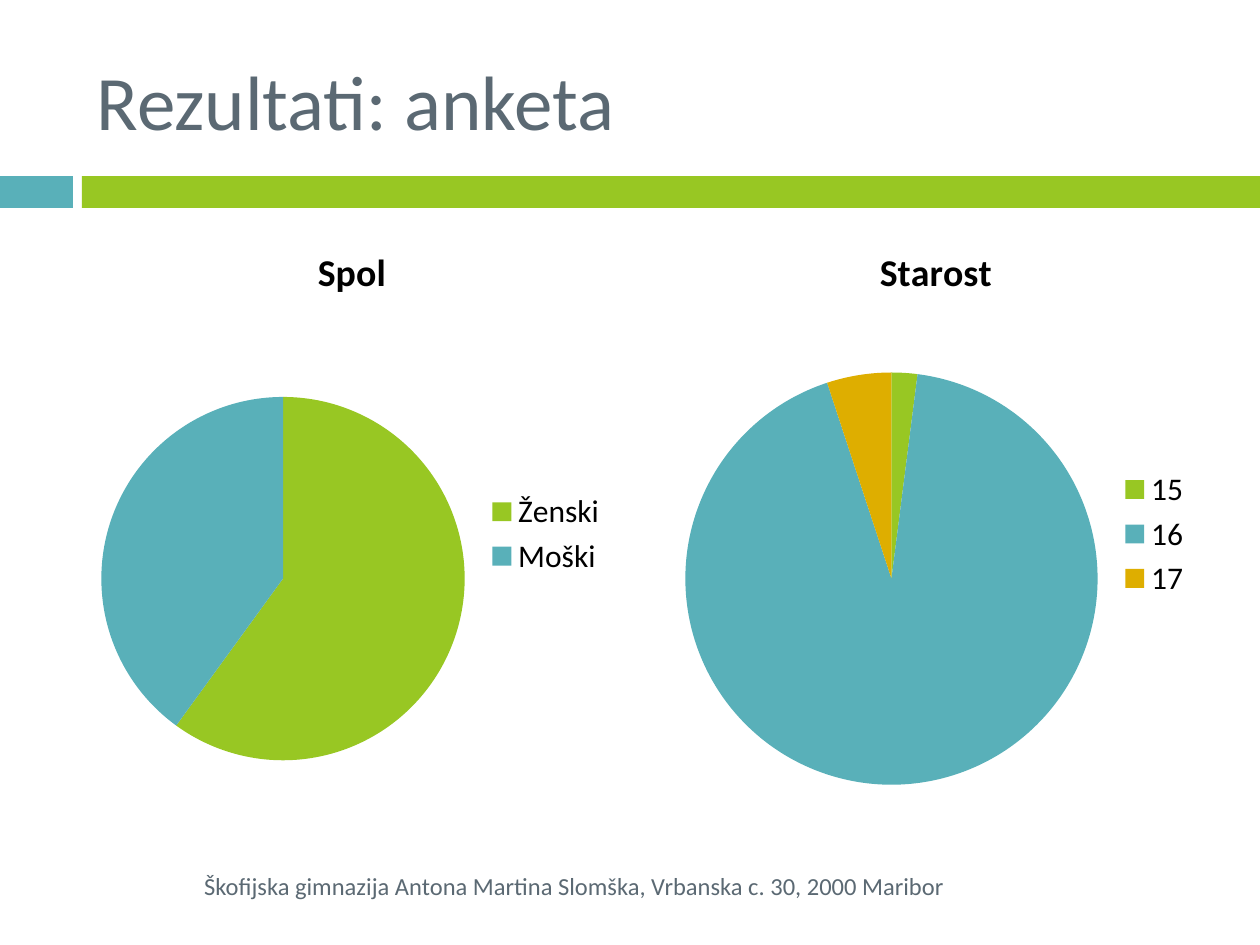
import dataclasses

import pptx
import pptx.chart.data
import pptx.dml.color
import pptx.enum.chart
import pptx.enum.shapes
import pptx.enum.text
import pptx.util


@dataclasses.dataclass(frozen=True)
class Theme:
    font: str = "Calibri"
    green: str = "98C723"
    teal: str = "59B0B9"
    gold: str = "DEAE00"
    slate: str = "5B6973"
    black: str = "000000"
    head: float = 44
    label: float = 18
    name: float = 21.6
    foot: float = 14


THEME = Theme()
SCALE = 914400 / 126
LEFT = 84


def px(*sizes):
    return [pptx.util.Emu(round(size * SCALE)) for size in sizes]


def color(code):
    return pptx.dml.color.RGBColor.from_string(code)


def paint(fill, code):
    fill.solid()
    fill.fore_color.rgb = color(code)


def style(font, size, code, bold=False):
    font.name = THEME.font
    font.size = pptx.util.Pt(size)
    font.color.rgb = color(code)
    font.bold = bold


def write(frame, text, size, align):
    frame.word_wrap = True
    frame.vertical_anchor = pptx.enum.text.MSO_ANCHOR.MIDDLE
    line = frame.paragraphs[0]
    line.text = text
    line.alignment = align
    style(line.font, size, THEME.slate)


def add_bar(slide, box, code):
    bar = slide.shapes.add_shape(pptx.enum.shapes.MSO_SHAPE.RECTANGLE, *px(*box))
    bar.shadow.inherit = False
    paint(bar.fill, code)
    bar.line.fill.background()


def add_title(slide, text, box):
    title = slide.shapes.title
    title.left, title.top, title.width, title.height = px(*box)
    write(title.text_frame, text, THEME.head, pptx.enum.text.PP_ALIGN.LEFT)


def add_foot(slide, text, box):
    foot = slide.shapes.add_textbox(*px(*box))
    write(foot.text_frame, text, THEME.foot, pptx.enum.text.PP_ALIGN.RIGHT)


def add_pie(slide, name, parts, box):
    data = pptx.chart.data.CategoryChartData()
    data.categories = list(parts)
    data.add_series(name, list(parts.values()))
    kind = pptx.enum.chart.XL_CHART_TYPE.PIE
    chart = slide.shapes.add_chart(kind, *px(*box), data).chart
    style(chart.font, THEME.label, THEME.black)

    chart.has_title = True
    chart.chart_title.include_in_layout = False
    title = chart.chart_title.text_frame
    title.text = name
    style(title.paragraphs[0].font, THEME.name, THEME.black, True)

    chart.has_legend = True
    chart.legend.position = pptx.enum.chart.XL_LEGEND_POSITION.RIGHT
    chart.legend.include_in_layout = False

    plot = chart.plots[0]
    plot.vary_by_categories = True
    codes = [THEME.green, THEME.teal, THEME.gold]
    for spot, code in zip(range(len(parts)), codes):
        paint(plot.series[0].points[spot].format.fill, code)


def main():
    deck = pptx.Presentation()
    deck.slide_width, deck.slide_height = px(1260, 945)
    slide = deck.slides.add_slide(deck.slide_layouts[5])

    add_bar(slide, (0, 176, 73, 32), THEME.teal)
    add_bar(slide, (82, 176, 1178, 32), THEME.green)
    add_title(slide, "Rezultati: anketa", (LEFT, 32, 1124, 136))

    pies = {
        "Spol": {"Ženski": 60, "Moški": 40},
        "Starost": {"15": 2, "16": 92, "17": 5},
    }
    for spot, (name, parts) in enumerate(pies.items()):
        add_pie(slide, name, parts, (LEFT + spot * 584, 219, 536, 630))

    add_foot(
        slide,
        "Škofijska gimnazija Antona Martina Slomška, Vrbanska c. 30, 2000 Maribor",
        (LEFT, 861, 873, 50),
    )
    deck.save("out.pptx")


if __name__ == "__main__":
    main()
